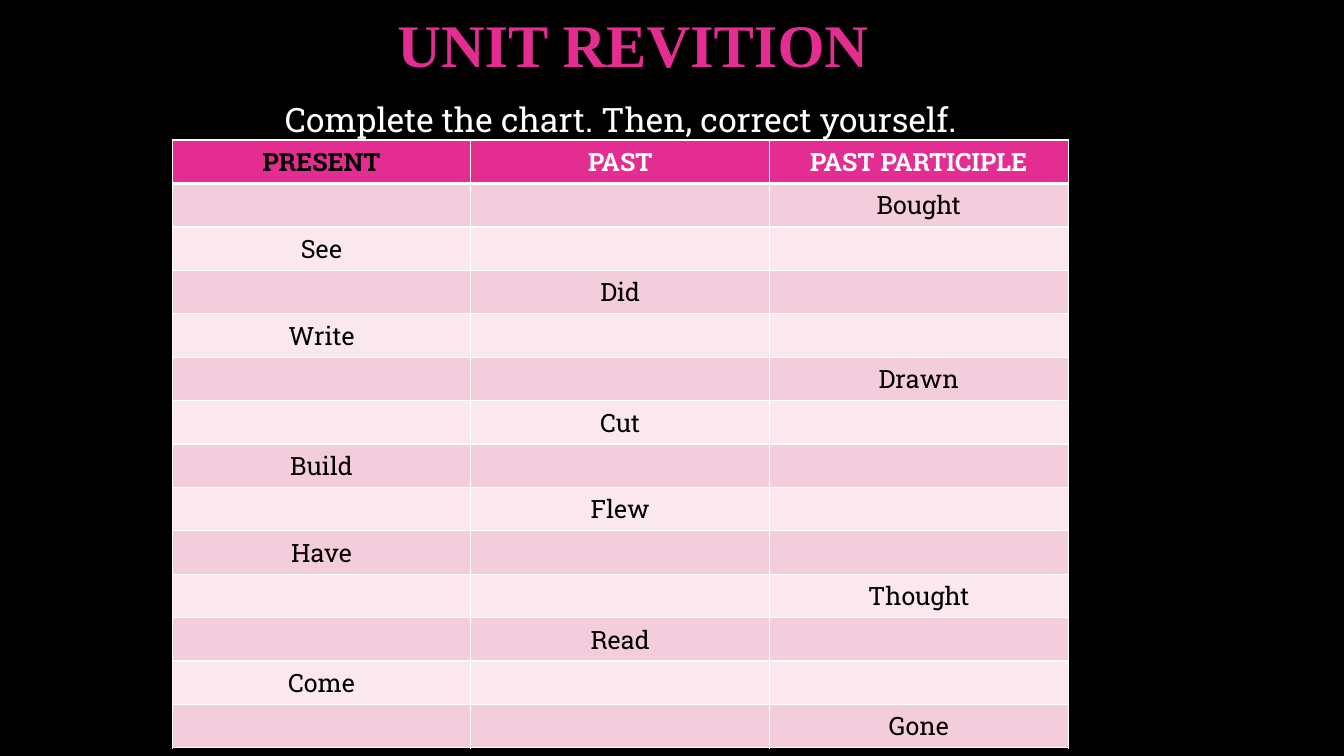
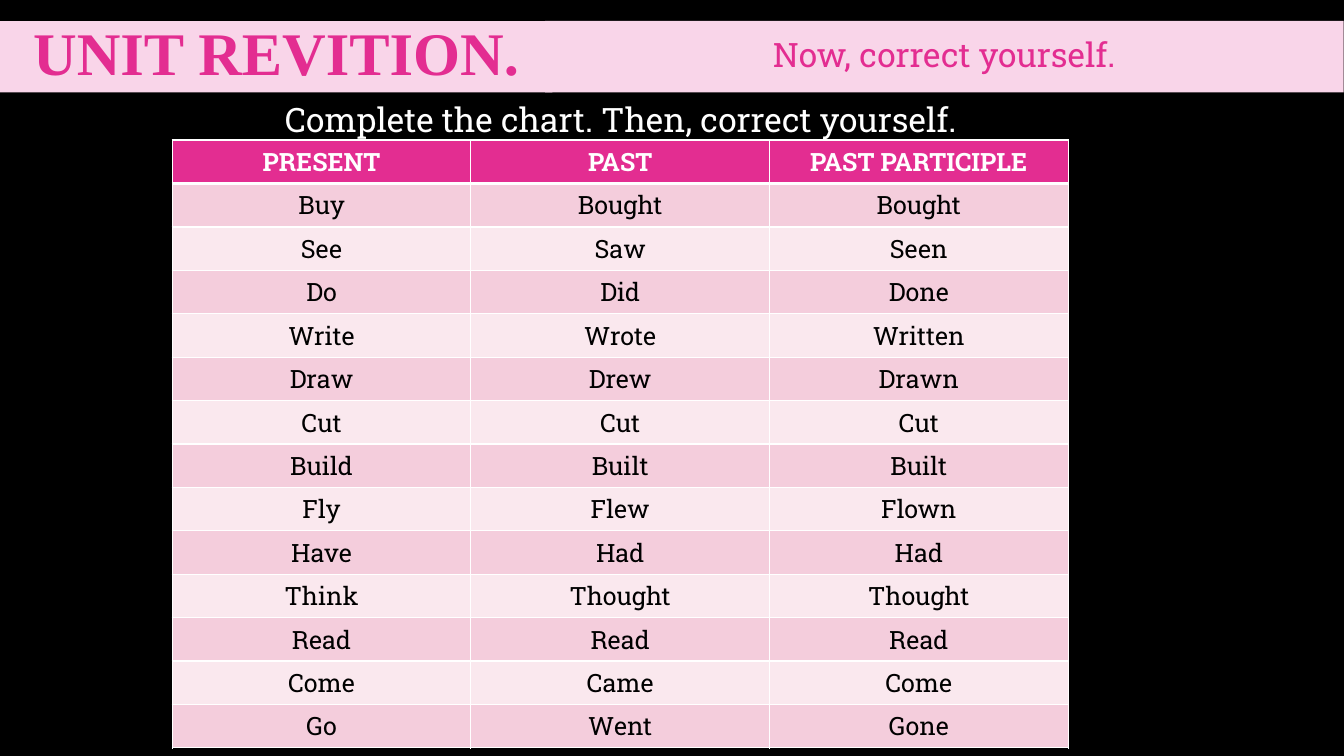
from lxml.etree import SubElement
from pptx import Presentation
from pptx.dml.color import RGBColor
from pptx.enum.shapes import MSO_SHAPE as SHAPE
from pptx.enum.text import MSO_ANCHOR as ANCHOR, MSO_AUTO_SIZE as AUTO, PP_ALIGN as ALIGN
from pptx.oxml.ns import qn
from pptx.util import Cm, Pt

BLACK, WHITE, PINK = "000000", "FFFFFF", "E32D91"
BAND, ROW_DARK, ROW_LIGHT = "F9D5E9", "F4CDDC", "FAE8EE"
SERIF, SLAB = "Times New Roman", "Roboto Slab"

HEADERS = ["PRESENT", "PAST", "PAST PARTICIPLE"]
VERBS = [
    (["Buy", "Bought", "Bought"], 2),
    (["See", "Saw", "Seen"], 0),
    (["Do", "Did", "Done"], 1),
    (["Write", "Wrote", "Written"], 0),
    (["Draw", "Drew", "Drawn"], 2),
    (["Cut", "Cut", "Cut"], 1),
    (["Build", "Built", "Built"], 0),
    (["Fly", "Flew", "Flown"], 1),
    (["Have", "Had", "Had"], 0),
    (["Think", "Thought", "Thought"], 2),
    (["Read", "Read", "Read"], 1),
    (["Come", "Came", "Come"], 0),
    (["Go", "Went", "Gone"], 2),
]
TABLE_BOX = (4.34, 3.53, 22.58, 15.09)
PROMPT_BOX = (2.95, 2.16, 25.4, 4.6)


def rgb(value):
    return RGBColor.from_string(value)


def paint(target, color):
    target.fill.solid()
    target.fill.fore_color.rgb = rgb(color)


def write(tf, text, size=24, font=SLAB, color=WHITE, bold=False,
          spacing=None, before=0, anchor=ANCHOR.TOP):
    tf.word_wrap = True
    tf.auto_size = AUTO.NONE
    tf.vertical_anchor = anchor
    p = tf.paragraphs[0]
    p.alignment = ALIGN.CENTER
    p.space_before = Pt(before)
    if spacing:
        p.line_spacing = spacing
    r = p.add_run()
    r.text = text
    r.font.size = Pt(size)
    r.font.name = font
    r.font.bold = bold
    r.font.color.rgb = rgb(color)


def place(sp, box):
    sp.left, sp.top, sp.width, sp.height = map(Cm, box)


def add_title(s, text, box, spacing, fill=None):
    sp = s.shapes.title
    place(sp, box)
    if fill:
        paint(sp, fill)
    write(sp.text_frame, text, size=43.2, font=SERIF, color=PINK, bold=True,
          spacing=spacing, anchor=ANCHOR.BOTTOM)


def add_prompt(s, box):
    sp = s.placeholders[1]
    place(sp, box)
    write(sp.text_frame, "Complete the chart. Then, correct yourself.",
          spacing=1.2, before=10)


def add_band(s, text, box):
    sp = s.shapes.add_shape(SHAPE.RECTANGLE, *map(Cm, box))
    sp.shadow.inherit = False
    sp.line.fill.background()
    paint(sp, BAND)
    write(sp.text_frame, text, color=PINK, spacing=1.2, before=10)


def set_borders(cell, top, bottom):
    tc_pr = cell._tc.get_or_add_tcPr()
    for side, width in (("L", 1), ("R", 1), ("T", top), ("B", bottom)):
        ln = SubElement(tc_pr, qn(f"a:ln{side}"), w=str(Pt(width)))
        fill = SubElement(ln, qn("a:solidFill"))
        SubElement(fill, qn("a:srgbClr"), val=WHITE)


def add_verb_table(s, rows, box, first_color):
    table = s.shapes.add_table(len(rows), len(HEADERS), *map(Cm, box)).table
    for i, row in enumerate(rows):
        header = i == 0
        fill = PINK if header else ROW_DARK if i % 2 else ROW_LIGHT
        for j, text in enumerate(row):
            cell = table.cell(i, j)
            set_borders(cell, 3 if i == 1 else 1, 3 if header else 1)
            paint(cell, fill)
            if text:
                color = WHITE if header else BLACK
                if header and j == 0:
                    color = first_color
                write_cell(cell, text, color, header)


def write_cell(cell, text, color, bold):
    p = cell.text_frame.paragraphs[0]
    p.alignment = ALIGN.CENTER
    r = p.add_run()
    r.text = text
    r.font.size = Pt(18)
    r.font.name = SLAB
    r.font.bold = bold
    r.font.color.rgb = rgb(color)


def add_chart_slide(prs, rows, first_color=WHITE):
    s = prs.slides.add_slide(prs.slide_layouts[0])
    add_prompt(s, PROMPT_BOX)
    add_verb_table(s, [HEADERS] + rows, TABLE_BOX, first_color)
    return s


def exercise_slide(prs):
    rows = [[form if j == given else "" for j, form in enumerate(forms)]
            for forms, given in VERBS]
    s = add_chart_slide(prs, rows, first_color=BLACK)
    add_title(s, "UNIT REVITION", (3.25, 0.36, 25.4, 1.8), 0.9)


def answer_slide(prs):
    s = add_chart_slide(prs, [forms for forms, given in VERBS])
    add_title(s, "UNIT REVITION.", (0, 0.53, 13.92, 1.8), 0.8, fill=BAND)
    add_band(s, "Now, correct yourself.", (13.74, 0.53, 20.12, 1.8))


def main():
    prs = Presentation()
    prs.slide_width, prs.slide_height = Cm(33.87), Cm(19.05)
    paint(prs.slide_master.background, BLACK)
    exercise_slide(prs)
    answer_slide(prs)
    prs.save("out.pptx")


if __name__ == "__main__":
    main()
